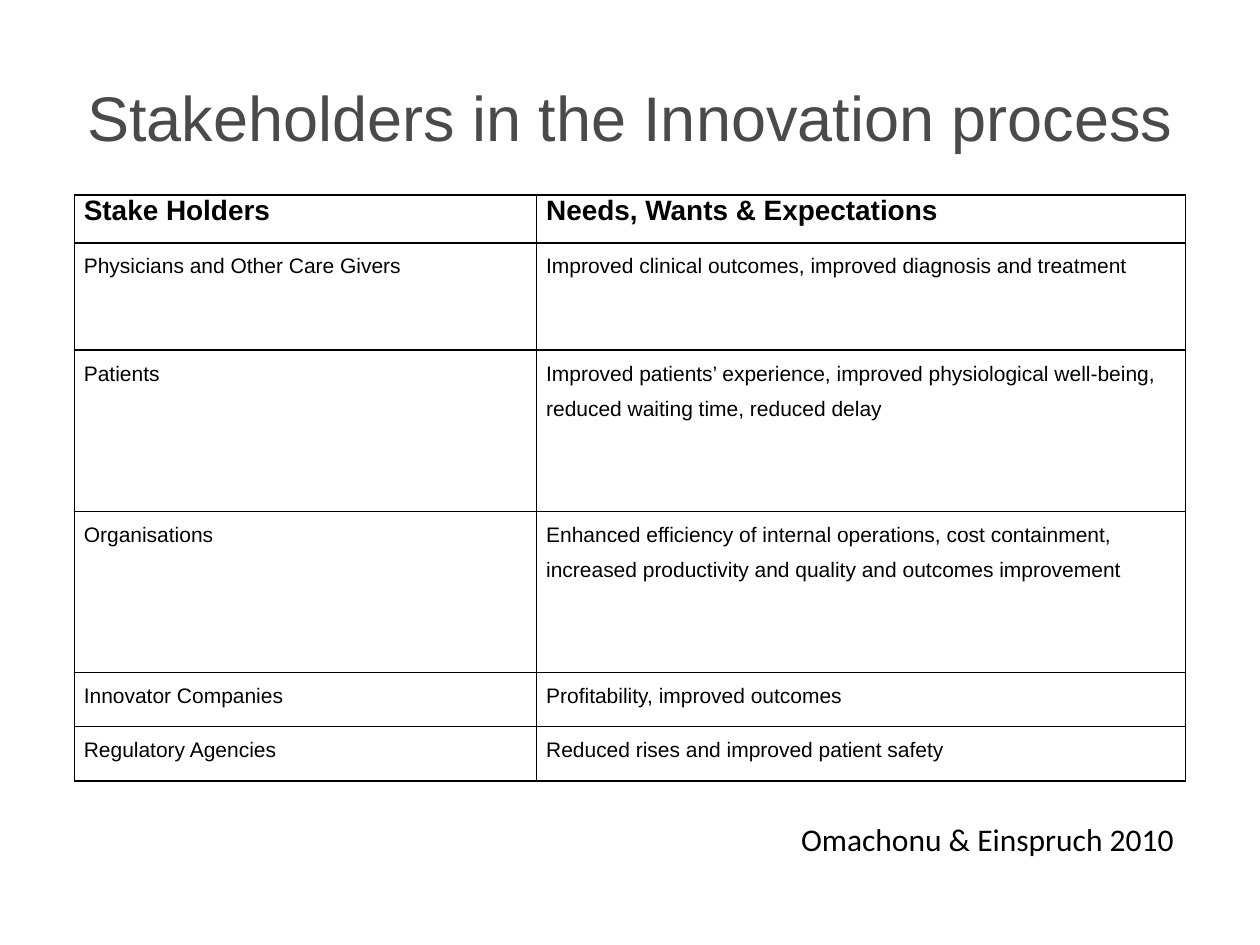
from typing import NamedTuple

import pptx
import pptx.dml.color
import pptx.enum.text
import pptx.oxml
import pptx.oxml.ns
import pptx.util
from pptx.dml.color import RGBColor
from pptx.util import Cm

BLACK = RGBColor(0x00, 0x00, 0x00)
GREY = RGBColor(0x4A, 0x4A, 0x4A)

COLUMN_WIDTHS = (9.32, 13.08)
HEADER = ("Stake Holders", "Needs, Wants & Expectations")


class Stakeholder(NamedTuple):
    name: str
    needs: str
    height: float


STAKEHOLDERS = (
    Stakeholder("Physicians and Other Care Givers",
                "Improved clinical outcomes, improved diagnosis and treatment", 2.16),
    Stakeholder("Patients",
                "Improved patients’ experience, improved physiological well-being, "
                "reduced waiting time, reduced delay", 3.25),
    Stakeholder("Organisations",
                "Enhanced efficiency of internal operations, cost containment, "
                "increased productivity and quality and outcomes improvement", 3.25),
    Stakeholder("Innovator Companies", "Profitability, improved outcomes", 1.09),
    Stakeholder("Regulatory Agencies", "Reduced rises and improved patient safety", 1.09),
)


def add_run(p, text: str, size: float, color: RGBColor,
            font: str = "Arial", bold: bool = False) -> None:
    r = p.add_run()
    r.text = text
    r.font.name = font
    r.font.size = pptx.util.Pt(size)
    r.font.bold = bold
    r.font.color.rgb = color


def add_borders(cell) -> None:
    """Draw a 1 pt line on all four sides of the cell."""
    properties = cell._tc.get_or_add_tcPr()
    for side in "LRTB":
        properties.append(pptx.oxml.parse_xml(
            f'<a:ln{side} {pptx.oxml.ns.nsdecls("a")} w="12700">'
            f'<a:solidFill><a:srgbClr val="{BLACK}"/></a:solidFill></a:ln{side}>'))


def fill_cell(cell, text: str, header: bool) -> None:
    add_borders(cell)
    cell.fill.background()
    cell.margin_left = cell.margin_right = Cm(0.19)
    cell.margin_top = cell.margin_bottom = Cm(0)
    p = cell.text_frame.paragraphs[0]
    if header:
        p.space_after = pptx.util.Pt(6)
    else:
        p.line_spacing = 1.5
    add_run(p, text, 16 if header else 12, BLACK, bold=header)


def add_title(s) -> None:
    tf = s.shapes.add_textbox(Cm(1.27), Cm(0.76), Cm(22.86), Cm(3.18)).text_frame
    tf.word_wrap = True
    tf.vertical_anchor = pptx.enum.text.MSO_ANCHOR.MIDDLE
    p = tf.paragraphs[0]
    p.alignment = pptx.enum.text.PP_ALIGN.CENTER
    add_run(p, "Stakeholders in the Innovation process", 36, GREY)


def add_stakeholder_table(s) -> None:
    heights = [0.97] + [holder.height for holder in STAKEHOLDERS]
    rows = [HEADER] + [(holder.name, holder.needs) for holder in STAKEHOLDERS]
    table = s.shapes.add_table(len(rows), len(COLUMN_WIDTHS), Cm(1.5), Cm(3.93),
                               Cm(sum(COLUMN_WIDTHS)), Cm(sum(heights))).table
    table.first_row = table.horz_banding = False
    for column, width in zip(table.columns, COLUMN_WIDTHS):
        column.width = Cm(width)
    for i, (texts, height) in enumerate(zip(rows, heights)):
        table.rows[i].height = Cm(height)
        for j, text in enumerate(texts):
            fill_cell(table.cell(i, j), text, header=i == 0)


def add_citation(s) -> None:
    tf = s.shapes.add_textbox(Cm(15.9), Cm(16.41), Cm(8.1), Cm(1.02)).text_frame
    tf.word_wrap = False
    tf.auto_size = pptx.enum.text.MSO_AUTO_SIZE.SHAPE_TO_FIT_TEXT
    add_run(tf.paragraphs[0], "Omachonu & Einspruch 2010", 18, BLACK, font="Calibri")


def main() -> None:
    prs = pptx.Presentation()
    prs.slide_width, prs.slide_height = Cm(25.4), Cm(19.05)
    s = prs.slides.add_slide(prs.slide_layouts[6])
    add_title(s)
    add_stakeholder_table(s)
    add_citation(s)
    prs.save("out.pptx")


if __name__ == "__main__":
    main()
